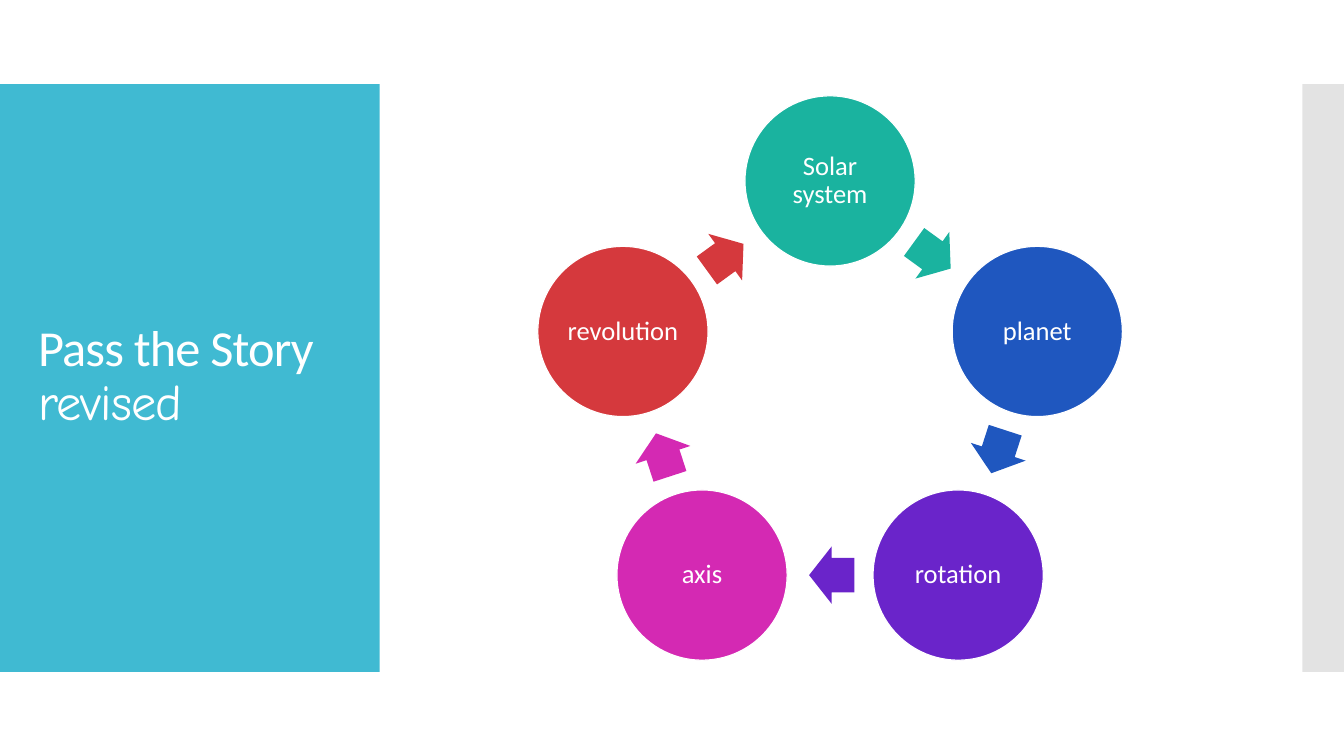
from math import cos, pi, sin
from lxml.etree import SubElement
from pptx import Presentation
from pptx.dml.color import RGBColor
from pptx.enum.shapes import MSO_SHAPE
from pptx.enum.text import MSO_ANCHOR, PP_ALIGN
from pptx.oxml.ns import qn
from pptx.util import Cm, Pt

COLORS = {
    "white": "FFFFFF", "panel": "40BAD2", "strip": "C8C8C8",
    "teal": "1AB39F", "blue": "1F57BF", "purple": "6A24CA",
    "pink": "D429B3", "red": "D5393D",
}
WORDS = [("Solar system", "teal"), ("planet", "blue"), ("rotation", "purple"),
         ("axis", "pink"), ("revolution", "red")]

deck = Presentation()
deck.slide_width, deck.slide_height = Cm(33.87), Cm(19.05)
slide = deck.slides.add_slide(deck.slide_layouts[6])


def rgb(name):
    return RGBColor.from_string(COLORS[name])


def draw(kind, left, top, width, height, color):
    shape = slide.shapes.add_shape(kind, Cm(left), Cm(top), Cm(width), Cm(height))
    shape.shadow.inherit = False
    shape.fill.solid()
    shape.fill.fore_color.rgb = rgb(color)
    shape.line.fill.background()
    return shape


draw(MSO_SHAPE.RECTANGLE, 0, 2.12, 9.57, 14.81, "panel")
strip = draw(MSO_SHAPE.RECTANGLE, 32.82, 2.12, 1.05, 14.81, "strip")
tint = strip.fill._xPr.find(qn("a:solidFill"))[0]
SubElement(tint, qn("a:alpha"), val="50000")

title = slide.shapes.add_textbox(Cm(0.71), Cm(3.12), Cm(8.18), Cm(12.78))
frame = title.text_frame
frame.word_wrap = True
frame.vertical_anchor = MSO_ANCHOR.MIDDLE
para = frame.paragraphs[0]
para.line_spacing = 0.9
para.font.size = Pt(36)
para.font.color.rgb = rgb("white")
for text, face in [("Pass the Story ", "Calibri"), ("revised", "Comic Neue")]:
    run = para.add_run()
    run.text = text
    run.font.name = face
    run._r.get_or_add_rPr().set("spc", "-60")

mid_x, mid_y, radius = 20.92, 10.05, 5.49
size, length, breadth, shift = 4.29, 1.14, 1.45, 0.04
step = 2 * pi / len(WORDS)

for i, (word, color) in enumerate(WORDS):
    angle = i * step
    x = mid_x + radius * sin(angle)
    y = mid_y - radius * cos(angle)
    disc = draw(MSO_SHAPE.OVAL, x - size / 2, y - size / 2, size, size, color)
    disc.line.color.rgb = rgb("white")
    disc.line.width = Pt(0.85)
    frame = disc.text_frame
    frame.word_wrap = True
    frame.vertical_anchor = MSO_ANCHOR.MIDDLE
    frame.margin_left = frame.margin_right = Cm(0.08)
    frame.margin_top = frame.margin_bottom = Cm(0.08)
    para = frame.paragraphs[0]
    para.text = word
    para.alignment = PP_ALIGN.CENTER
    para.line_spacing = 0.9
    para.font.name = "Calibri"
    para.font.size = Pt(19)
    para.font.color.rgb = rgb("white")

    turn = angle + step / 2
    reach = radius * cos(step / 2)
    x = mid_x + reach * sin(turn) - shift * cos(turn)
    y = mid_y - reach * cos(turn) - shift * sin(turn)
    arrow = draw(MSO_SHAPE.RIGHT_ARROW, x - length / 2, y - breadth / 2,
                 length, breadth, color)
    arrow.adjustments[0] = 0.6
    arrow.adjustments[1] = 0.5
    arrow.rotation = 36 + 72 * i

deck.save("out.pptx")
